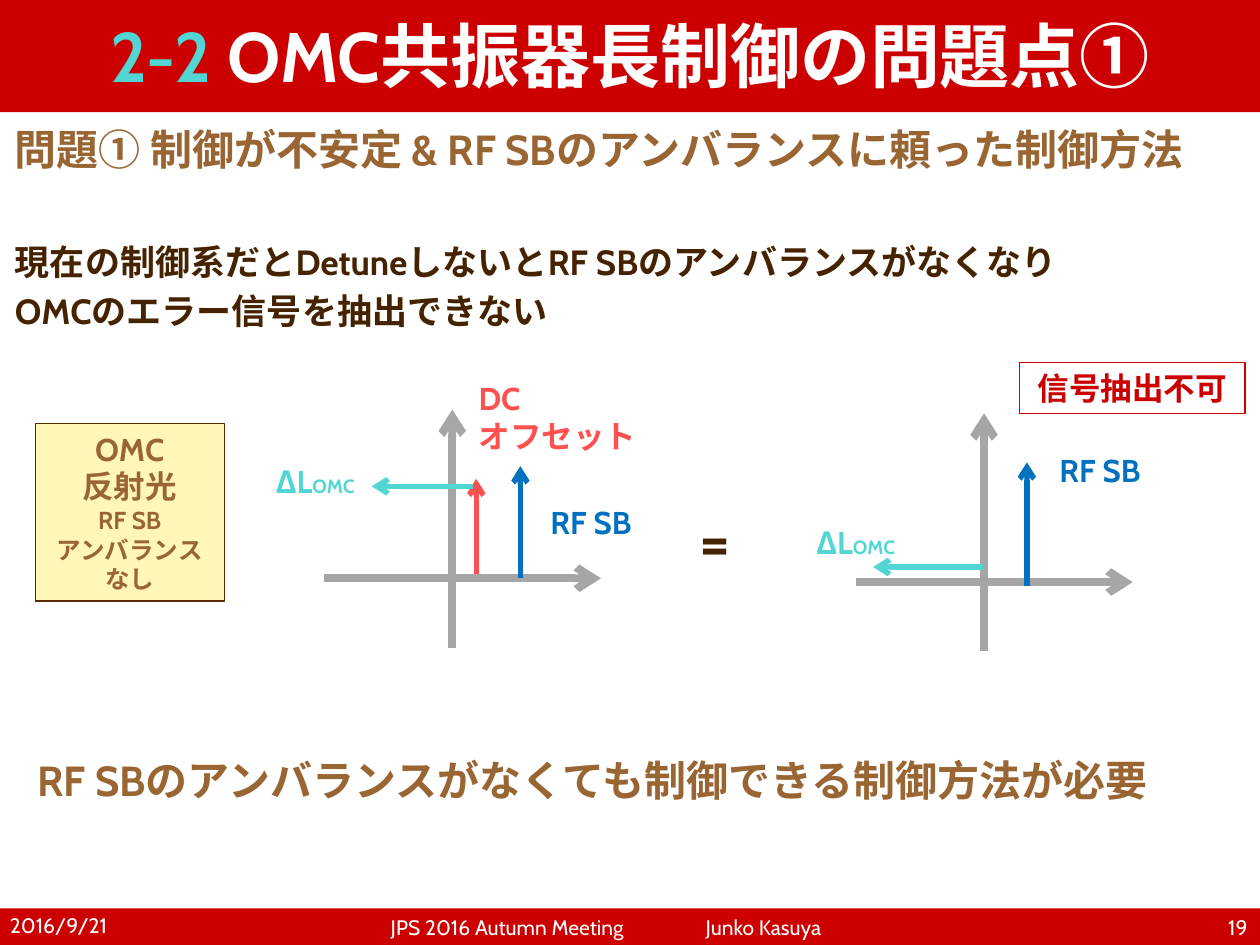
from pptx import Presentation, util as u
from pptx.dml.color import RGBColor
from pptx.enum import shapes, text
from pptx.oxml.ns import qn
from lxml import etree

CELL = u.Inches(0.1)  # the slide is a grid of 100 columns by 75 rows
RED, WHITE, TEAL, BLUE = "CC0000", "FFFFFF", "51D6D3", "0070C0"
BROWN, DARK, CORAL, GRAY = "996633", "462300", "FF5050", "A6A6A6"
LEFT, CENTER, RIGHT = text.PP_ALIGN.LEFT, text.PP_ALIGN.CENTER, text.PP_ALIGN.RIGHT
TOP, MIDDLE = text.MSO_ANCHOR.TOP, text.MSO_ANCHOR.MIDDLE


def color(value):
    return RGBColor.from_string(value)


def cells(*values):
    return [round(value * CELL) for value in values]


def set_all(target, values):
    for name, value in values.items():
        setattr(target, name, value)


def write(shape, paragraphs, align=LEFT, anchor=TOP, bold=True, gaps=()):
    """Each paragraph is a list of (words, size, colour) runs."""
    frame = shape.text_frame
    set_all(frame, {"word_wrap": True, "vertical_anchor": anchor,
                    "auto_size": text.MSO_AUTO_SIZE.NONE})
    for index, runs in enumerate(paragraphs):
        paragraph = frame.add_paragraph() if index else frame.paragraphs[0]
        paragraph.alignment = align
        if gaps:
            paragraph.space_before = u.Pt(gaps[index])
        for words, size, tint in runs:
            run = paragraph.add_run()
            run.text = words
            set_all(run.font, {"name": "Cabin", "size": u.Pt(size), "bold": bold})
            run.font.color.rgb = color(tint)


def label(slide, box, paragraphs, **options):
    write(slide.shapes.add_textbox(*cells(*box)), paragraphs, **options)


def panel(slide, box, fill=None, line=None):
    shape = slide.shapes.add_shape(shapes.MSO_SHAPE.RECTANGLE, *cells(*box))
    shape.shadow.inherit = False
    if fill:
        shape.fill.solid()
        shape.fill.fore_color.rgb = color(fill)
    else:
        shape.fill.background()
    if line:
        shape.line.color.rgb = color(line)
        shape.line.width = u.Pt(0.75)
    else:
        shape.line.fill.background()
    return shape


def arrow(slide, start, end, tint, width=3):
    connector = slide.shapes.add_connector(
        shapes.MSO_CONNECTOR.STRAIGHT, *cells(*start, *end))
    connector.line.color.rgb = color(tint)
    connector.line.width = u.Pt(width)
    etree.SubElement(connector.line._get_or_add_ln(), qn("a:tailEnd"), type="arrow")
    etree.SubElement(connector._element.spPr, qn("a:effectLst"))


def axes(slide, x, y):
    arrow(slide, (x, y + 5.5), (x, y - 13.4), GRAY, 4.5)
    arrow(slide, (x - 10.2, y), (x + 11.8, y), GRAY, 4.5)


def sideband(slide, x, bottom, top, label_left, label_top):
    arrow(slide, (x, bottom), (x, top), BLUE)
    label(slide, (label_left, label_top, 16, 4), [[("RF SB", 18, BLUE)]])


def length_shift(slide, start, end, y, label_left, label_top):
    arrow(slide, (start, y), (end, y), TEAL)
    label(slide, (label_left, label_top, 15.8, 4),
          [[("ΔL", 18, TEAL), ("OMC", 11, TEAL)]])


def title(slide):
    band = slide.shapes.title
    set_all(band, dict(zip(("left", "top", "width", "height"),
                           cells(0, -0.3, 100, 9.2))))
    band.fill.solid()
    band.fill.fore_color.rgb = color(RED)
    write(band, [[("2-2", 40, TEAL), (" OMC共振器長制御の問題点①", 40, WHITE)]],
          align=CENTER, anchor=MIDDLE)


def footer(slide):
    panel(slide, (-0.2, 72.1, 100.2, 2.9), RED)
    for box, words, align in (
            ((-0.2, 71.4, 23.3, 4), "2016/9/21", LEFT),
            ((25.6, 71.6, 45, 4), "JPS 2016 Autumn Meeting \t\tJunko Kasuya", CENTER),
            ((76.7, 71.6, 23.3, 4), "19", RIGHT)):
        label(slide, box, [[(words, 12, WHITE)]], align=align, anchor=MIDDLE, bold=False)


def main():
    presentation = Presentation()
    set_all(presentation, {"slide_width": 100 * CELL, "slide_height": 75 * CELL})
    slide = presentation.slides.add_slide(presentation.slide_layouts[5])
    title(slide)
    footer(slide)

    # Problem and conclusion
    label(slide, (0.2, 9.3, 99.8, 18), [
        [("問題① 制御が不安定 & RF SBのアンバランスに頼った制御方法", 24, BROWN)],
        [("現在の制御系だとDetuneしないとRF SBのアンバランスがなくなり", 20, DARK)],
        [("OMCのエラー信号を抽出できない", 20, DARK)]], gaps=(4.8, 38, 4))
    label(slide, (2, 59.4, 98, 6),
          [[("RF SBのアンバランスがなくても制御できる制御方法が必要", 24, BROWN)]],
          gaps=(4.8,))

    # Left diagram: with DC offset
    arrow(slide, (37.8, 45.7), (37.8, 38), CORAL)
    axes(slide, 35.9, 45.9)
    label(slide, (37, 29.6, 23.7, 7.1),
          [[("DC", 18, CORAL)], [("オフセット", 18, CORAL)]])
    length_shift(slide, 37.5, 29.5, 38.6, 20.9, 36.2)
    sideband(slide, 41.3, 45.9, 37, 42.7, 39.4)

    label(slide, (54.5, 39.3, 8.5, 7.1), [[("=", 36, DARK)]])

    # Right diagram: equivalent signal
    axes(slide, 78.1, 46.2)
    length_shift(slide, 78, 69.3, 45, 63.8, 41)
    sideband(slide, 81.5, 46.5, 36.7, 83.1, 35.3)

    # Boxed notes
    write(panel(slide, (2.8, 33.6, 15, 14.1), "FFF6B7", "582C00"),
          [[("OMC", 18, BROWN)], [("反射光", 18, BROWN)],
           [("RF SB", 14, BROWN)], [("アンバランスなし", 14, BROWN)]], align=CENTER)
    write(panel(slide, (80.9, 28.8, 17.9, 4), line=RED),
          [[("信号抽出不可", 18, RED)]], align=CENTER)
    presentation.save("out.pptx")


main()
